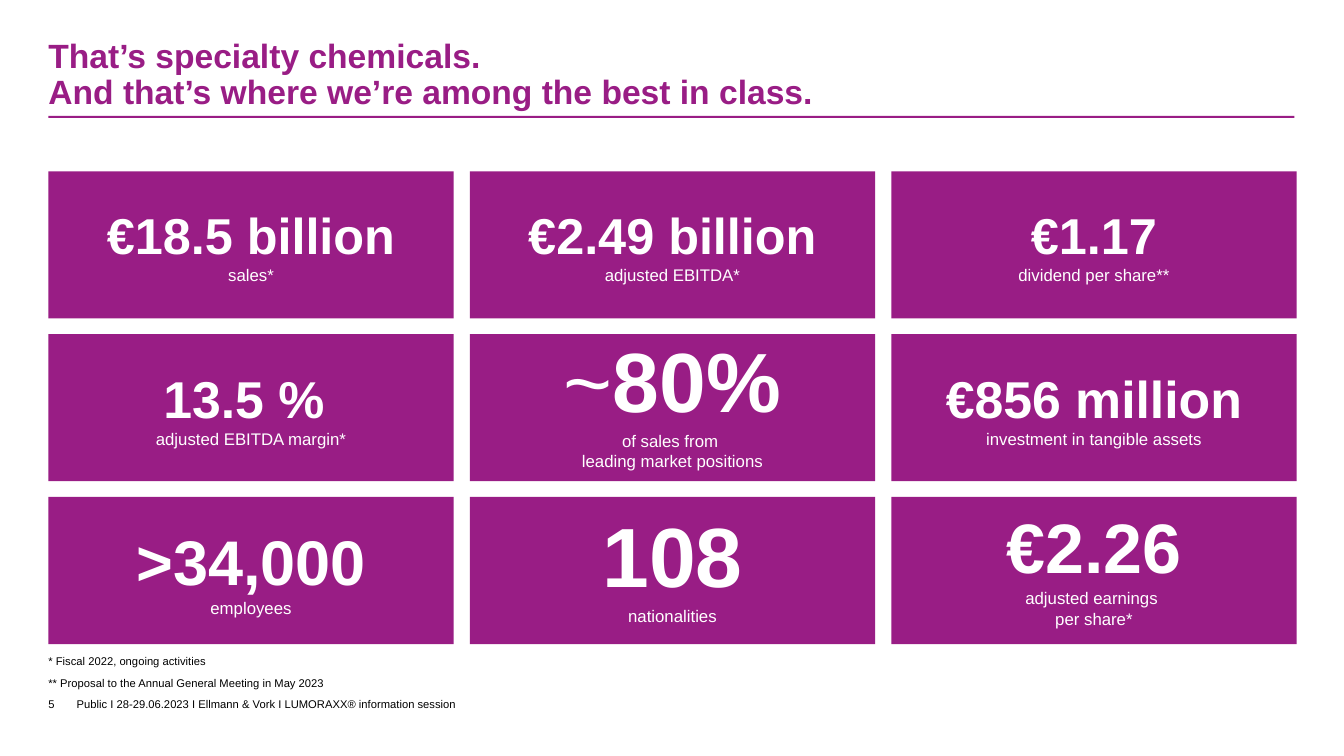
from pptx import Presentation
from pptx import util as u
from pptx.dml.color import RGBColor
from pptx.enum import shapes, text

COLORS = {"brand": "991D85", "white": "FFFFFF", "black": "000000"}
FONT = "Arial"
LEFT, WIDTH = 0.48, 12.36
TILE_TOP, TILE_WIDTH, TILE_HEIGHT = 1.7, 4.02, 1.46
COLUMN_STEP, ROW_STEP = 4.18, 1.615

# Figure, its size, caption lines
TILES = [
    [("€18.5 billion", 36, ["sales*"]),
     ("€2.49 billion", 36, ["adjusted EBITDA*"]),
     ("€1.17", 36, ["dividend per share**"])],
    [("13.5 % ", 37, ["adjusted EBITDA margin*"]),
     ("~80%", 60, ["of sales from ", "leading market positions"]),
     ("€856 million", 37, ["investment in tangible assets"])],
    [(">34,000", 45, ["employees"]),
     ("108", 60, ["nationalities"]),
     ("€2.26", 50, ["adjusted earnings ", "per share*"])],
]


class SlideBuilder:
    def __init__(self, deck):
        self.page = deck.slides.add_slide(deck.slide_layouts[5])

    def style(self, para, size, color, bold=False):
        for span in para.runs:
            font = span.font
            font.name, font.size, font.bold = FONT, u.Pt(size), bold
            font.color.rgb = RGBColor.from_string(COLORS[color])

    def clear_margins(self, frame):
        frame.margin_left = frame.margin_right = 0
        frame.margin_top = frame.margin_bottom = 0

    def title(self, wording, left, top, width, height):
        box = self.page.shapes.title
        box.left, box.top = u.Inches(left), u.Inches(top)
        box.width, box.height = u.Inches(width), u.Inches(height)
        frame = box.text_frame
        self.clear_margins(frame)
        frame.word_wrap = True
        frame.auto_size = text.MSO_AUTO_SIZE.NONE
        frame.vertical_anchor = text.MSO_ANCHOR.BOTTOM
        para = frame.paragraphs[0]
        para.text = wording
        para.alignment = text.PP_ALIGN.LEFT
        para.line_spacing = 0.9
        para.space_before = u.Pt(0)
        self.style(para, 24, "brand", bold=True)

    def rectangle(self, left, top, width, height):
        box = self.page.shapes.add_shape(
            shapes.MSO_SHAPE.RECTANGLE, u.Inches(left), u.Inches(top),
            u.Inches(width), u.Inches(height))
        box.shadow.inherit = False
        box.fill.solid()
        box.fill.fore_color.rgb = RGBColor.from_string(COLORS["brand"])
        box.line.fill.background()
        return box

    def tile(self, left, top, figure, size, captions):
        frame = self.rectangle(left, top, TILE_WIDTH, TILE_HEIGHT).text_frame
        frame.word_wrap = True
        frame.vertical_anchor = text.MSO_ANCHOR.MIDDLE
        frame.text = "\n".join([figure, *captions])
        for para in frame.paragraphs:
            para.alignment = text.PP_ALIGN.CENTER
            self.style(para, 12, "white")
        headline = frame.paragraphs[0]
        if size >= 50:
            headline.line_spacing = 0.9
        if figure.startswith("~"):
            frame.margin_top = 0
            headline.runs[0].text = "~"
            headline.add_run().text = figure[1:]
        self.style(headline, size, "white", bold=True)
        if figure.startswith("~"):
            headline.runs[0].font.bold = False

    def small_print(self, lines, left, top, width, height, gap=0, wrap=True):
        box = self.page.shapes.add_textbox(
            u.Inches(left), u.Inches(top), u.Inches(width), u.Inches(height))
        frame = box.text_frame
        self.clear_margins(frame)
        frame.word_wrap = wrap
        frame.text = "\n".join(lines)
        for para in frame.paragraphs:
            para.space_after = u.Pt(gap)
            self.style(para, 8, "black")


def main():
    deck = Presentation()
    deck.slide_width, deck.slide_height = u.Inches(13.33), u.Inches(7.5)
    slide = SlideBuilder(deck)
    slide.rectangle(LEFT, 1.15, WIDTH, 0.02)
    slide.title("That’s specialty chemicals. \v"
                "And that’s where we’re among the best in class.",
                LEFT, 0.36, WIDTH, 0.75)
    for row, tiles in enumerate(TILES):
        for column, (figure, size, captions) in enumerate(tiles):
            slide.tile(LEFT + column * COLUMN_STEP, TILE_TOP + row * ROW_STEP,
                       figure, size, captions)
    slide.small_print(["* Fiscal 2022, ongoing activities",
                       "** Proposal to the Annual General Meeting in May 2023"],
                      LEFT, 6.49, 8.19, 0.35, gap=6)
    slide.small_print(["5"], LEFT, 6.92, 0.34, 0.13, wrap=False)
    slide.small_print(["Public I 28-29.06.2023 I Ellmann & Vork I "
                       "LUMORAXX® information session"],
                      0.76, 6.92, 9.35, 0.13)
    deck.save("out.pptx")


if __name__ == "__main__":
    main()
